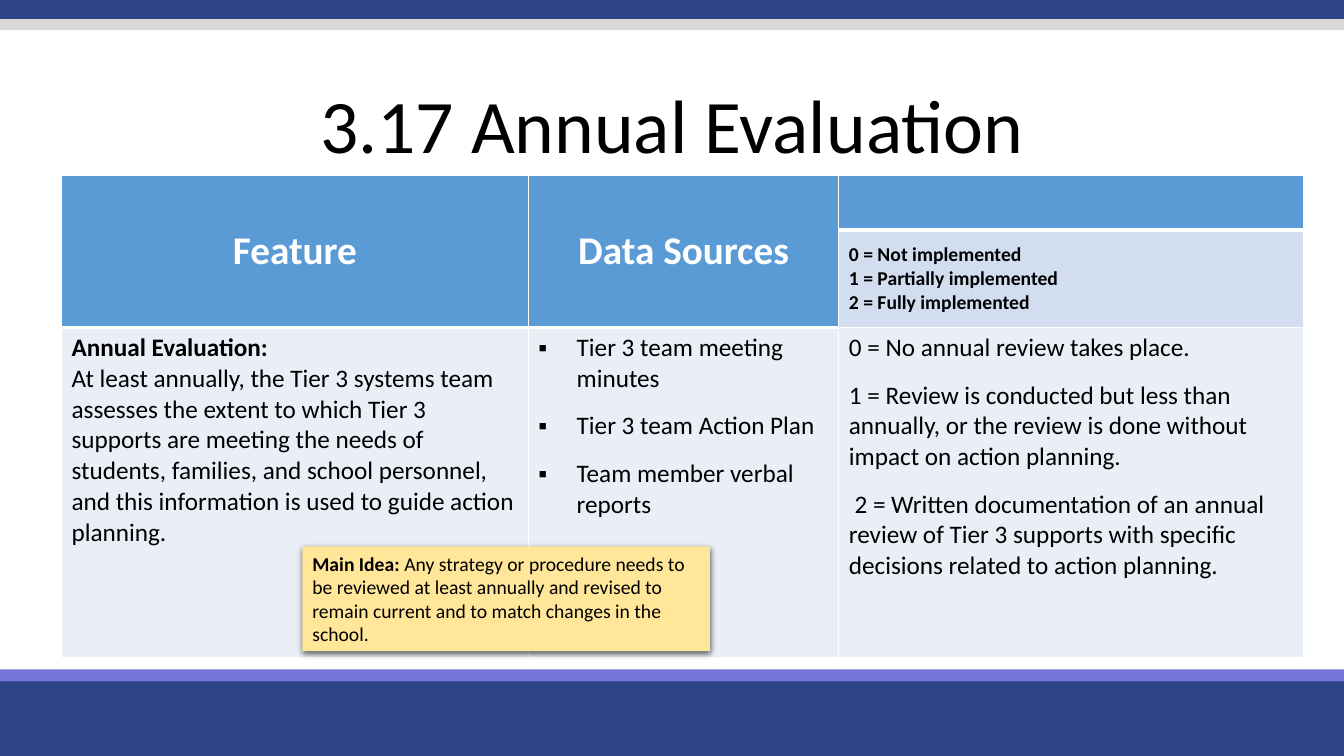
from lxml import etree
from pptx import Presentation
from pptx.dml.color import RGBColor
from pptx.enum.shapes import MSO_SHAPE
from pptx.enum.text import MSO_ANCHOR, PP_ALIGN
from pptx.oxml import parse_xml
from pptx.oxml.ns import nsdecls, qn
from pptx.util import Inches, Pt

RECT = MSO_SHAPE.RECTANGLE
TOP, MIDDLE = MSO_ANCHOR.TOP, MSO_ANCHOR.MIDDLE
LEFT, CENTER = PP_ALIGN.LEFT, PP_ALIGN.CENTER
FONT = "Calibri"
NAVY = RGBColor(0x2E, 0x44, 0x88)
VIOLET = RGBColor(0x74, 0x76, 0xDA)
GRAY = RGBColor(0xD9, 0xD9, 0xD9)
BLUE = RGBColor(0x5B, 0x9B, 0xD5)
PALE = RGBColor(0xD2, 0xDE, 0xEF)
MIST = RGBColor(0xEA, 0xEF, 0xF7)
YELLOW = RGBColor(0xFF, 0xE6, 0x99)
BLACK = RGBColor(0, 0, 0)
WHITE = RGBColor(0xFF, 0xFF, 0xFF)

# Content
WIDTH, HEIGHT = 13.33, 7.5
TITLE = "3.17 Annual Evaluation"
BANDS = [  # top, height, colour
    (6.7, 0.8, NAVY),
    (6.64, 0.12, VIOLET),
    (0, 0.19, NAVY),
    (0.19, 0.11, GRAY),
]
COLS = [4.63, 3.08, 4.61]
ROWS = [0.54, 0.97, 3.27]
HEADS = ["Feature", "Data Sources"]
SCALE = ["0 = Not implemented", "1 = Partially implemented",
         "2 = Fully implemented"]
FEATURE = [
    "Annual Evaluation:",
    "At least annually, the Tier 3 systems team assesses the extent to which "
    "Tier 3 supports are meeting the needs of students, families, and school "
    "personnel, and this information is used to guide action planning.",
]
SOURCES = ["Tier 3 team meeting minutes", "Tier 3 team Action Plan",
           "Team member verbal reports"]
SCORES = [
    "0 = No annual review takes place.",
    "1 = Review is conducted but less than annually, or the review is done "
    "without impact on action planning.",
    " 2 = Written documentation of an annual review of Tier 3 supports with "
    "specific decisions related to action planning.",
]
IDEA = ("Main Idea: ", "Any strategy or procedure needs to be reviewed at "
        "least annually and revised to remain current and to match changes "
        "in the school.")


def style(run, size, bold=False, color=BLACK):
    font = run.font
    font.name, font.size, font.bold = FONT, Pt(size), bold
    font.color.rgb = color


def write(frame, lines, size, bold=False, color=BLACK, align=LEFT, after=0):
    frame.text = "\n".join(lines)
    for para in frame.paragraphs:
        para.alignment = align
        para.space_after = Pt(after)
        for run in para.runs:
            style(run, size, bold, color)


def bullet(para):
    props = para._p.get_or_add_pPr()
    props.set("marL", str(Inches(0.38)))
    props.set("indent", str(-Inches(0.38)))
    etree.SubElement(props, qn("a:buFont")).set("typeface", "Wingdings")
    props[-1].set("typeface", "Arial")
    etree.SubElement(props, qn("a:buChar")).set("char", "▪")


def border(cell, top, bottom):
    props = cell._tc.get_or_add_tcPr()
    for side, width in (("L", 1), ("R", 1), ("T", top), ("B", bottom)):
        props.append(parse_xml(
            f'<a:ln{side} {nsdecls("a")} w="{Pt(width)}"><a:solidFill>'
            f'<a:srgbClr val="{WHITE}"/></a:solidFill></a:ln{side}>'))


def box(top, height, color, left=0, width=WIDTH):
    shape = slide.shapes.add_shape(RECT, Inches(left), Inches(top),
                                   Inches(width), Inches(height))
    shape.shadow.inherit = False
    shape.fill.solid()
    shape.fill.fore_color.rgb = color
    shape.line.fill.background()
    return shape


deck = Presentation()
deck.slide_width, deck.slide_height = Inches(WIDTH), Inches(HEIGHT)
slide = deck.slides.add_slide(deck.slide_layouts[6])

# Bands and title
for band in BANDS:
    box(*band)
title = slide.shapes.add_textbox(0, Inches(0.69), Inches(WIDTH),
                                 Inches(1.18)).text_frame
title.word_wrap = True
title.vertical_anchor = MIDDLE
write(title, [TITLE], 54, align=CENTER)
title.paragraphs[0].line_spacing = 0.9

# Table grid
table = slide.shapes.add_table(len(ROWS), len(COLS), Inches(0.61),
                               Inches(1.74), Inches(sum(COLS)),
                               Inches(sum(ROWS))).table
for col, width in zip(table.columns, COLS):
    col.width = Inches(width)
for row, height in zip(table.rows, ROWS):
    row.height = Inches(height)
thick = {(0, 2), (1, 0), (1, 1)}  # cells that close the header
for r in range(len(ROWS)):
    for c in range(len(COLS)):
        cell = table.cell(r, c)
        border(cell, 3 if (r - 1, c) in thick else 1,
               3 if (r, c) in thick else 1)
        cell.fill.solid()
        cell.fill.fore_color.rgb = (MIST if r == 2 else
                                    PALE if (r, c) == (1, 2) else BLUE)
        cell.vertical_anchor = TOP if r == 2 else MIDDLE

# Table text
for c, head in enumerate(HEADS):
    cell = table.cell(0, c)
    cell.merge(table.cell(1, c))
    write(cell.text_frame, [head], 28, True, WHITE, CENTER)
write(table.cell(1, 2).text_frame, SCALE, 14, True)
feature, sources, scores = [table.cell(2, c).text_frame for c in range(3)]
write(feature, FEATURE, 18)
feature.paragraphs[0].runs[0].font.bold = True
write(sources, SOURCES, 18, after=12)
for para in sources.paragraphs:
    bullet(para)
write(scores, SCORES, 18, after=12)

# Main idea note
note = box(5.42, 1.04, YELLOW, 3, 4.04)
effects = note._element.spPr.find(qn("a:effectLst"))
effects.append(parse_xml(
    f'<a:outerShdw {nsdecls("a")} blurRad="{Pt(4.5)}" dist="{Pt(1.5)}" '
    'dir="5400000" algn="ctr" rotWithShape="0"><a:srgbClr val="000000">'
    '<a:alpha val="63000"/></a:srgbClr></a:outerShdw>'))
frame = note.text_frame
frame.word_wrap = True
frame.vertical_anchor = MIDDLE
para = frame.paragraphs[0]
para.alignment = LEFT
for text, bold in zip(IDEA, (True, False)):
    run = para.add_run()
    run.text = text
    style(run, 14, bold)

deck.save("out.pptx")
